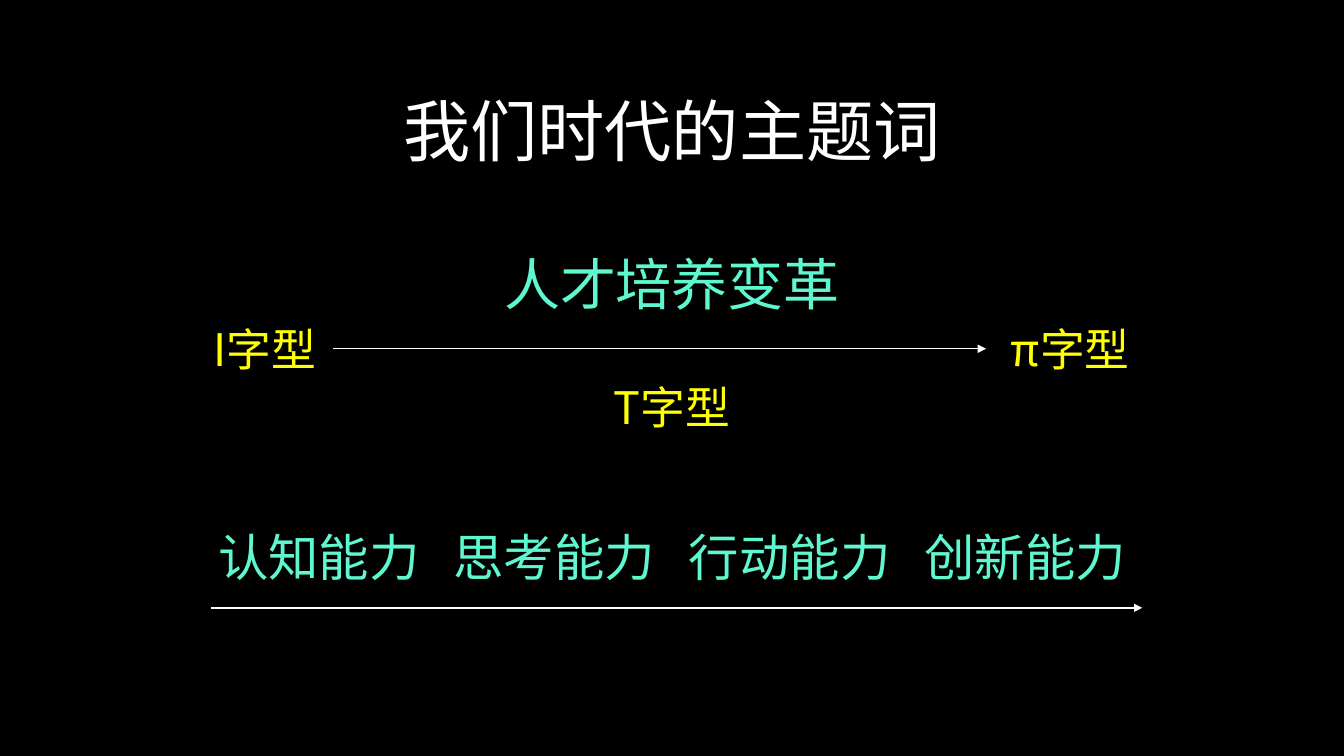
from lxml.etree import SubElement as Sub
from pptx import Presentation
from pptx.dml.color import RGBColor as RGB
from pptx.enum.shapes import MSO_CONNECTOR as Link
from pptx.enum.text import MSO_AUTO_SIZE as Fit, PP_ALIGN as Align
from pptx.oxml.ns import qn
from pptx.util import Inches, Pt

BLACK = RGB(0x00, 0x00, 0x00)
WHITE = RGB(0xFF, 0xFF, 0xFF)
MINT = RGB(0x5F, 0xF7, 0xCF)
YELLOW = RGB(0xFF, 0xFF, 0x00)
FACE = "Noto Sans CJK SC"
WIDE, HIGH = 13.33, 7.5

TITLE = dict(size=Pt(48), color=WHITE, lead=None)
THEME = dict(size=Pt(40), color=MINT, lead=1.5)
SKILL = dict(size=Pt(36), color=MINT, lead=1.5)
TYPE = dict(size=Pt(32), color=YELLOW, lead=None)
MID = TYPE | dict(lead=1.5)

ROWS = [
    ("我们时代的主题词", 0.84, 0.91, TITLE),
    ("人才培养变革", 2.09, 1.01, THEME),
    ("T字型", 3.45, 0.83, MID),
]
ENDS = [("I字型", 1.96, 1.34), ("π字型", 9.78, 1.67)]
SKILLS = ["认知能力", "思考能力", "行动能力", "创新能力"]
STEP = 2.335


def add_text(slide, text, left, top, width, height, style):
    box = slide.shapes.add_textbox(*map(Inches, (left, top, width, height)))
    frame = box.text_frame
    form = dict(word_wrap=True, auto_size=Fit.NONE, margin_left=0, margin_right=0)
    for name, value in form.items():
        setattr(frame, name, value)
    para = frame.paragraphs[0]
    para.alignment = Align.CENTER
    para.line_spacing = style["lead"]
    run = para.add_run()
    run.text = text
    run.font.size = style["size"]
    run.font.color.rgb = style["color"]
    run.font.name = FACE
    Sub(run.font._element, qn("a:ea"), typeface=FACE)
    return box


def add_arrow(slide, start, end, y):
    line = slide.shapes.add_connector(Link.STRAIGHT, *map(Inches, (start, y, end, y)))
    line.line.color.rgb = WHITE
    line.line.width = Pt(1)
    Sub(line.line._get_or_add_ln(), qn("a:tailEnd"), type="triangle")
    Sub(line._element.spPr, qn("a:effectLst"))
    return line


def main():
    """Build the slide on the key words of our era."""
    deck = Presentation()
    deck.slide_width, deck.slide_height = Inches(WIDE), Inches(HIGH)
    slide = deck.slides.add_slide(deck.slide_layouts[6])
    slide.background.fill.solid()
    slide.background.fill.fore_color.rgb = BLACK

    for text, top, height, style in ROWS:
        add_text(slide, text, 0, top, WIDE, height, style)
    first, last = [
        add_text(slide, text, left, 3.14, width, 0.64, TYPE)
        for text, left, width in ENDS
    ]
    shift = add_arrow(slide, 3.3, 9.78, 3.46)
    shift.begin_connect(first, 3)
    shift.end_connect(last, 1)

    edge = (WIDE - STEP * len(SKILLS)) / 2
    for col, text in enumerate(SKILLS):
        add_text(slide, text, edge + col * STEP, 4.87, STEP, 0.92, SKILL)
    add_arrow(slide, 2.09, 11.33, 6.03)
    deck.save("out.pptx")


if __name__ == "__main__":
    main()
